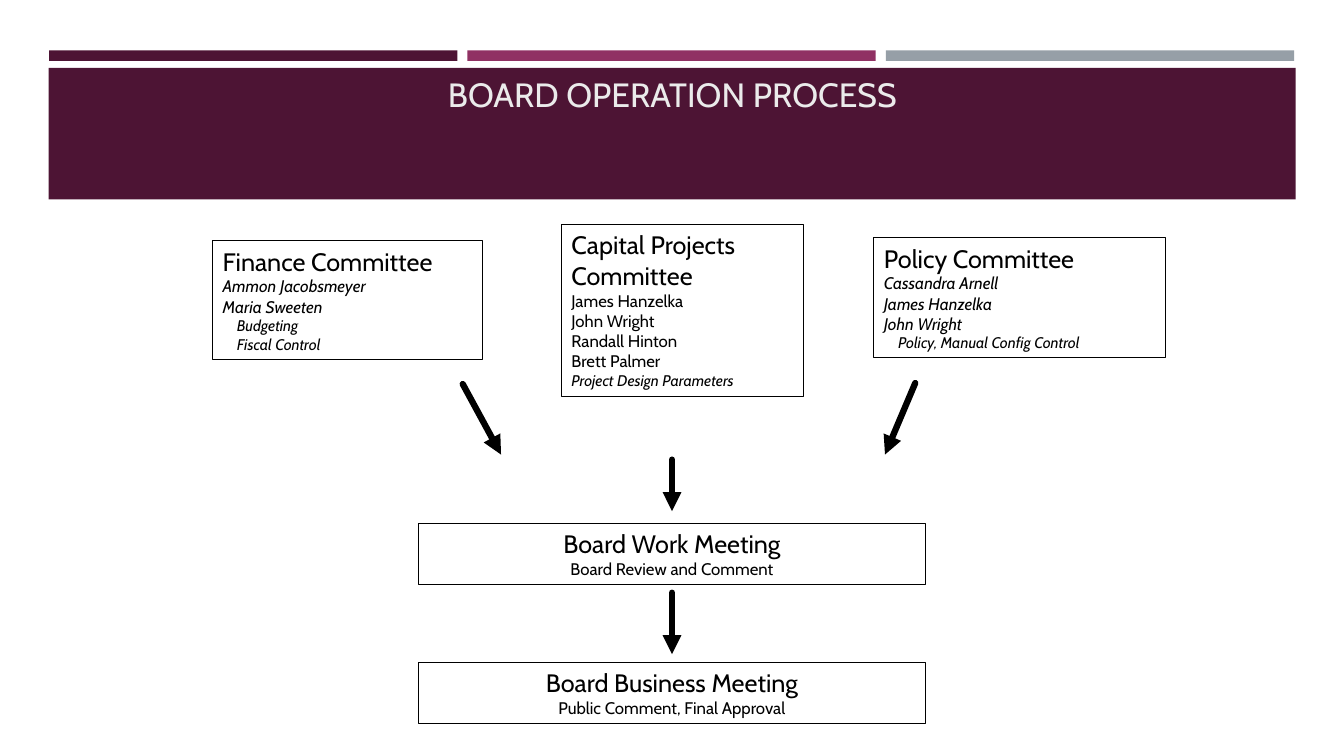
from lxml import etree
from pptx import Presentation
from pptx.dml.color import RGBColor
from pptx.enum.shapes import MSO_CONNECTOR, MSO_SHAPE
from pptx.enum.text import MSO_ANCHOR, PP_ALIGN
from pptx.oxml.ns import qn
from pptx.util import Inches, Pt

RECT = MSO_SHAPE.RECTANGLE
STRAIGHT = MSO_CONNECTOR.STRAIGHT
TOP = MSO_ANCHOR.TOP
LEFT, CENTER = PP_ALIGN.LEFT, PP_ALIGN.CENTER
BLACK = RGBColor(0x00, 0x00, 0x00)
PLUM = RGBColor(0x4D, 0x14, 0x34)
MAGENTA = RGBColor(0x90, 0x31, 0x63)
GREY = RGBColor(0x96, 0x9F, 0xA7)
PALE = RGBColor(0xEB, 0xEB, 0xEB)


class Board:
    """Draws on one slide with a shared style, in percent of the slide's size."""

    font = "Cabin"
    indent = Inches(0.14)
    box_line = Pt(0.75)
    arrow_line = Pt(4.5)

    def __init__(self, prs):
        self.s = prs.slides.add_slide(prs.slide_layouts[6])
        self.width, self.height = prs.slide_width, prs.slide_height

    def x(self, share):
        return round(self.width * share / 100)

    def y(self, share):
        return round(self.height * share / 100)

    def place(self, left, top, width, height):
        return self.x(left), self.y(top), self.x(width), self.y(height)

    def add_lines(self, tf, lines, align, color):
        tf.word_wrap = True
        tf.vertical_anchor = TOP
        for i, (text, size, italic, indented) in enumerate(lines):
            p = tf.paragraphs[0] if i == 0 else tf.add_paragraph()
            p.alignment = align
            if indented:
                p._p.get_or_add_pPr().set("marL", str(self.indent))
            r = p.add_run()
            r.text = text
            r.font.name = self.font
            r.font.size = Pt(size)
            r.font.italic = italic
            r.font.color.rgb = color

    def bar(self, area, color):
        sp = self.s.shapes.add_shape(RECT, *self.place(*area))
        sp.shadow.inherit = False
        sp.fill.solid()
        sp.fill.fore_color.rgb = color
        sp.line.fill.background()

    def box(self, area, lines, align=LEFT):
        sp = self.s.shapes.add_shape(RECT, *self.place(*area))
        sp.shadow.inherit = False
        sp.fill.background()
        sp.line.color.rgb = BLACK
        sp.line.width = self.box_line
        self.add_lines(sp.text_frame, lines, align, BLACK)

    def title(self, area, text):
        sp = self.s.shapes.add_textbox(*self.place(*area))
        self.add_lines(sp.text_frame, [(text, 24, False, False)], CENTER, PALE)

    def arrow(self, x1, y1, x2, y2):
        c = self.s.shapes.add_connector(
            STRAIGHT, self.x(x1), self.y(y1), self.x(x2), self.y(y2))
        c.line.color.rgb = BLACK
        c.line.width = self.arrow_line
        ln = c.line._get_or_add_ln()
        ln.set("cap", "rnd")
        etree.SubElement(ln, qn("a:round"))
        etree.SubElement(ln, qn("a:tailEnd"), type="triangle")
        etree.SubElement(c._element.spPr, qn("a:effectLst"))


def heading(text):
    """Return a box heading line."""
    return text, 18, False, False


def member(text, italic=True):
    """Return a line in the size of a committee member's name."""
    return text, 12, italic, False


def duty(text, indented=True):
    """Return a line for a committee's duty."""
    return text, 11, True, indented


COMMITTEES = [
    ((15.83, 31.87, 20.1, 15.73), [
        heading("Finance Committee"),
        member("Ammon Jacobsmeyer"),
        member("Maria Sweeten"),
        duty("Budgeting"),
        duty("Fiscal Control")]),
    ((41.78, 29.73, 18, 22.67), [
        heading("Capital Projects Committee"),
        member("James Hanzelka", False),
        member("John Wright", False),
        member("Randall Hinton", False),
        member("Brett Palmer", False),
        duty("Project Design Parameters", False)]),
    ((65.03, 31.47, 21.68, 15.87), [
        heading("Policy Committee"),
        member("Cassandra Arnell"),
        member("James Hanzelka"),
        member("John Wright"),
        duty("Policy, Manual Config Control")]),
]
MEETINGS = [
    (69.2, "Board Work Meeting", "Board Review and Comment"),
    (87.6, "Board Business Meeting", "Public Comment, Final Approval"),
]
ARROWS = [
    (34.43, 50.8, 37.28, 60.13),
    (50, 60.8, 50, 67.6),
    (68.1, 50.67, 65.85, 60.13),
    (50, 78.4, 50, 86.53),
]


def main():
    """Build the slide and save it."""
    prs = Presentation()
    prs.slide_width, prs.slide_height = Inches(13.33), Inches(7.5)
    board = Board(prs)
    for i, color in enumerate((PLUM, MAGENTA, GREY)):
        board.bar((3.65 + 31.13 * i, 6.67, 30.38, 1.4), color)
    board.bar((3.63, 8.97, 92.78, 17.4), PLUM)
    for area, lines in COMMITTEES:
        board.box(area, lines)
    for top, name, purpose in MEETINGS:
        board.box((31.13, top, 37.73, 8.13),
                  [heading(name), member(purpose, False)], CENTER)
    for ends in ARROWS:
        board.arrow(*ends)
    board.title((24, 9.07, 52.05, 6.67), "BOARD OPERATION PROCESS")
    prs.save("out.pptx")


if __name__ == "__main__":
    main()
